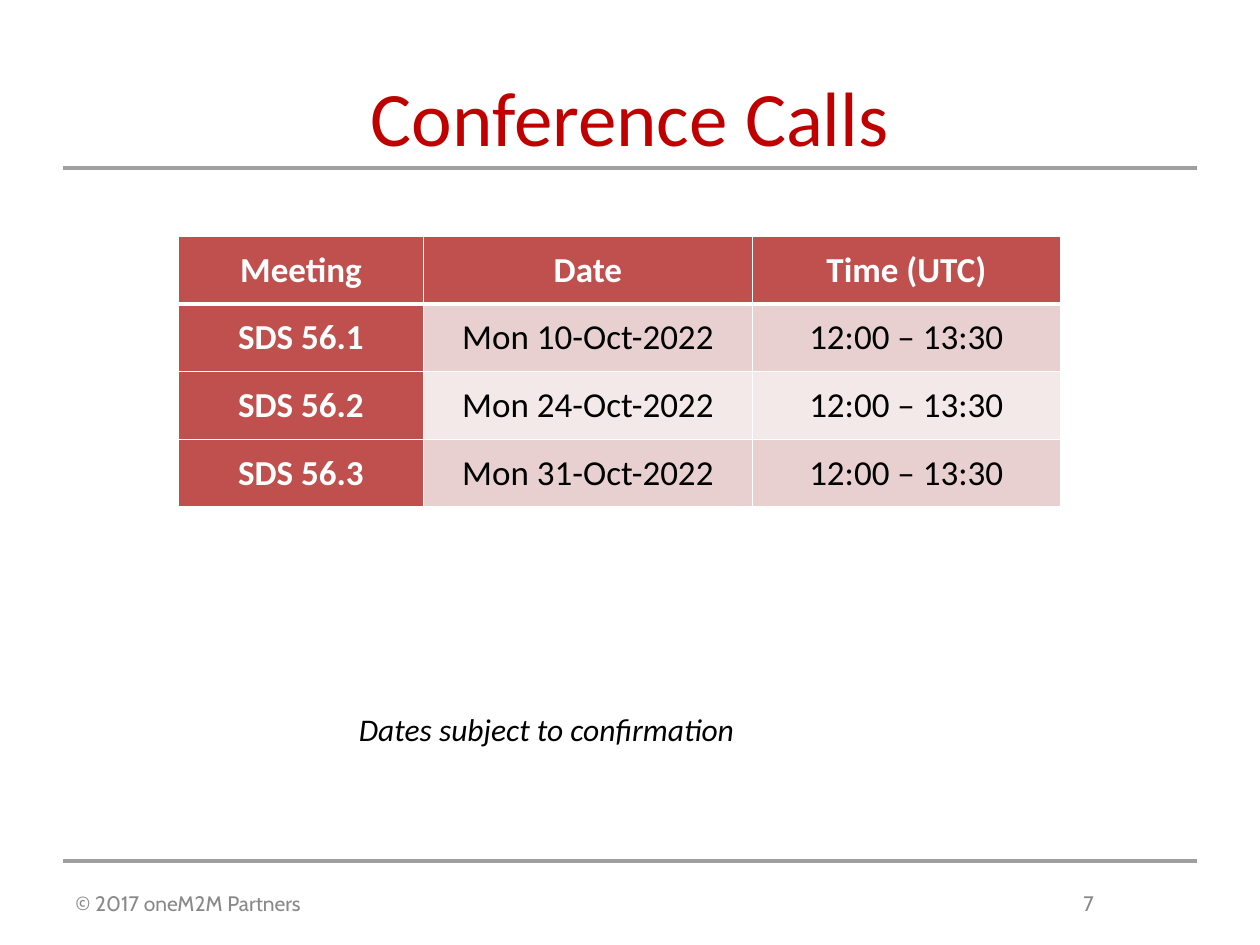
from lxml.etree import SubElement
from pptx import Presentation
from pptx.dml.color import RGBColor
from pptx.enum.shapes import MSO_CONNECTOR as Connector
from pptx.enum.text import MSO_ANCHOR as Anchor, MSO_AUTO_SIZE as AutoSize, PP_ALIGN as Align
from pptx.oxml.ns import qn
from pptx.util import Pt

COLORS = {
    "title": "C00000", "rule": "A0A0A3", "footer": "898989", "head": "C0504D",
    "odd": "E8D0D0", "even": "F4E9E9", "white": "FFFFFF", "black": "000000",
}
CALLS = [
    ("Meeting", "Date", "Time (UTC)"),
    ("SDS 56.1", "Mon 10-Oct-2022", "12:00 – 13:30"),
    ("SDS 56.2", "Mon 24-Oct-2022", "12:00 – 13:30"),
    ("SDS 56.3", "Mon 31-Oct-2022", "12:00 – 13:30"),
]


def color(name):
    """Return the named colour."""
    return RGBColor.from_string(COLORS[name])


def write(frame, text, size, ink, font="Calibri", bold=False, italic=False,
          align=Align.LEFT, tab=None):
    """Write one formatted paragraph into a text frame."""
    para = frame.paragraphs[0]
    para.alignment = align
    if tab:
        stops = SubElement(para._p.get_or_add_pPr(), qn("a:tabLst"))
        SubElement(stops, qn("a:tab"), pos=str(Pt(tab)), algn="l")
    span = para.add_run()
    span.text = text
    span.font.name, span.font.size = font, Pt(size)
    span.font.bold, span.font.italic = bold, italic
    span.font.color.rgb = color(ink)


def add_text(page, left, top, width, height, text, anchor=Anchor.TOP, wrap=True, **style):
    """Add a text box with one paragraph."""
    box = page.shapes.add_textbox(Pt(left), Pt(top), Pt(width), Pt(height))
    frame = box.text_frame
    frame.word_wrap = wrap
    frame.auto_size = AutoSize.NONE if wrap else AutoSize.SHAPE_TO_FIT_TEXT
    frame.vertical_anchor = anchor
    write(frame, text, **style)


def add_rule(page, left, top, width):
    """Add a horizontal grey rule."""
    rule = page.shapes.add_connector(
        Connector.STRAIGHT, Pt(left), Pt(top), Pt(left + width), Pt(top))
    rule.line.color.rgb = color("rule")
    rule.line.width = Pt(1.75)
    SubElement(rule._element.spPr, qn("a:effectLst"))


def add_header(page, left, top, width, height):
    """Place the title and the rule that crosses its box."""
    add_rule(page, left, top + 60, width)
    add_text(page, left, top, width, height, "Conference Calls",
             size=44, ink="title", align=Align.CENTER)


def add_footer(page, left, top, width, height):
    """Place the footer rule, copyright line and page number."""
    add_rule(page, left, top, width)
    add_text(page, left, top, width, height, "© 2017 oneM2M Partners\t7",
             anchor=Anchor.MIDDLE, size=12, ink="footer", font="Cabin", tab=576)


def set_borders(cell, bottom):
    """Draw white borders with the given bottom width."""
    props = cell._tc.get_or_add_tcPr()
    widths = {"L": 1, "R": 1, "T": 1, "B": bottom}
    for index, (side, width) in enumerate(widths.items()):
        edge = props.makeelement(qn(f"a:ln{side}"), {"w": str(Pt(width))})
        fill = SubElement(edge, qn("a:solidFill"))
        SubElement(fill, qn("a:srgbClr"), val=COLORS["white"])
        props.insert(index, edge)


def add_schedule(page, left, top, widths, row_height):
    """Place the table of calls."""
    table = page.shapes.add_table(
        len(CALLS), len(widths), Pt(left), Pt(top),
        Pt(sum(widths)), Pt(row_height * len(CALLS))).table
    for column, width in zip(table.columns, widths):
        column.width = Pt(width)
    for r, values in enumerate(CALLS):
        table.rows[r].height = Pt(row_height)
        for c, value in enumerate(values):
            cell = table.cell(r, c)
            heading = r == 0 or c == 0
            cell.margin_left = cell.margin_right = Pt(5)
            cell.margin_top = cell.margin_bottom = 0
            cell.vertical_anchor = Anchor.MIDDLE
            cell.fill.solid()
            cell.fill.fore_color.rgb = color("head" if heading else "odd" if r % 2 else "even")
            set_borders(cell, bottom=3 if r == 0 else 1)
            write(cell.text_frame, value, size=20, bold=heading,
                  ink="white" if heading else "black", align=Align.CENTER)


def main():
    """Build and save the slide."""
    deck = Presentation()
    deck.slide_width, deck.slide_height = Pt(720), Pt(540)
    page = deck.slides.add_slide(deck.slide_layouts[6])
    add_header(page, 36, 36, 648, 90)
    add_footer(page, 36, 492, 648, 48)
    add_schedule(page, 102, 135, (140, 188, 176), 38.7)
    add_text(page, 198, 402, 234, 29, "Dates subject to confirmation",
             wrap=False, size=18, ink="black", italic=True)
    deck.save("out.pptx")


if __name__ == "__main__":
    main()
